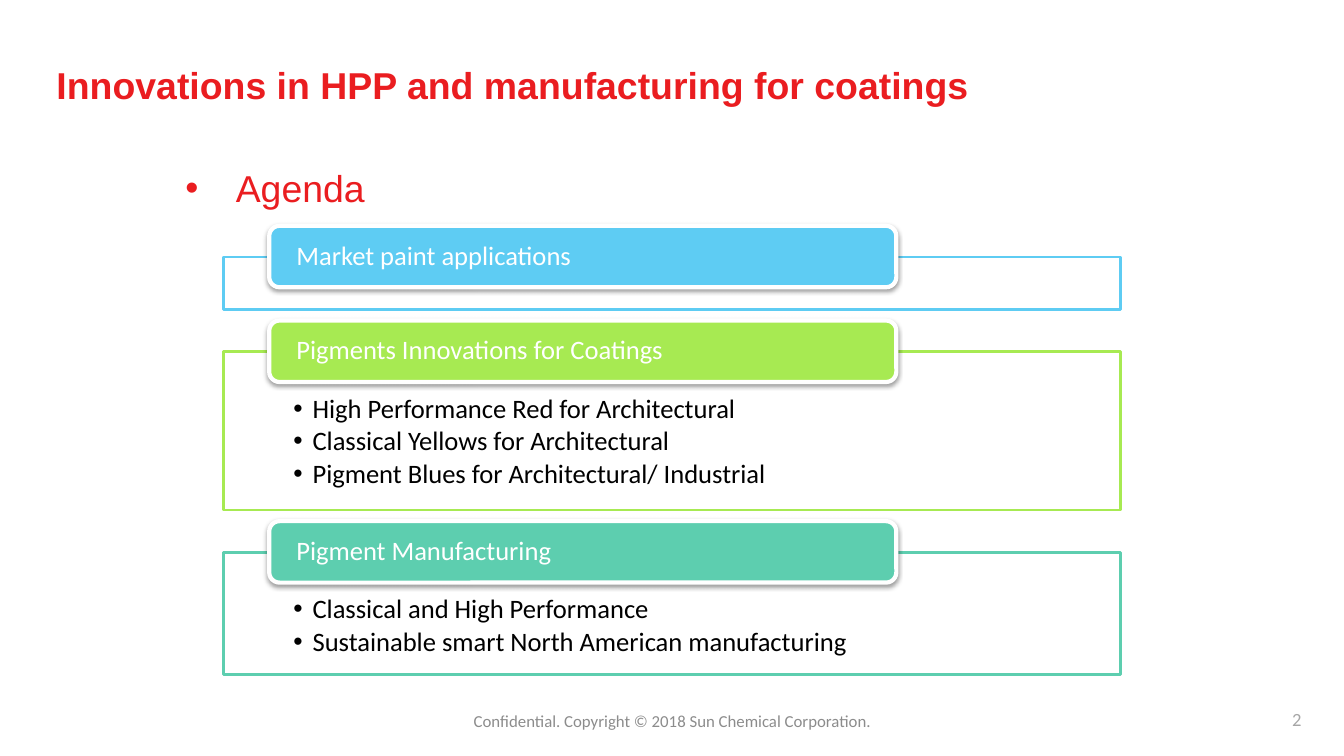
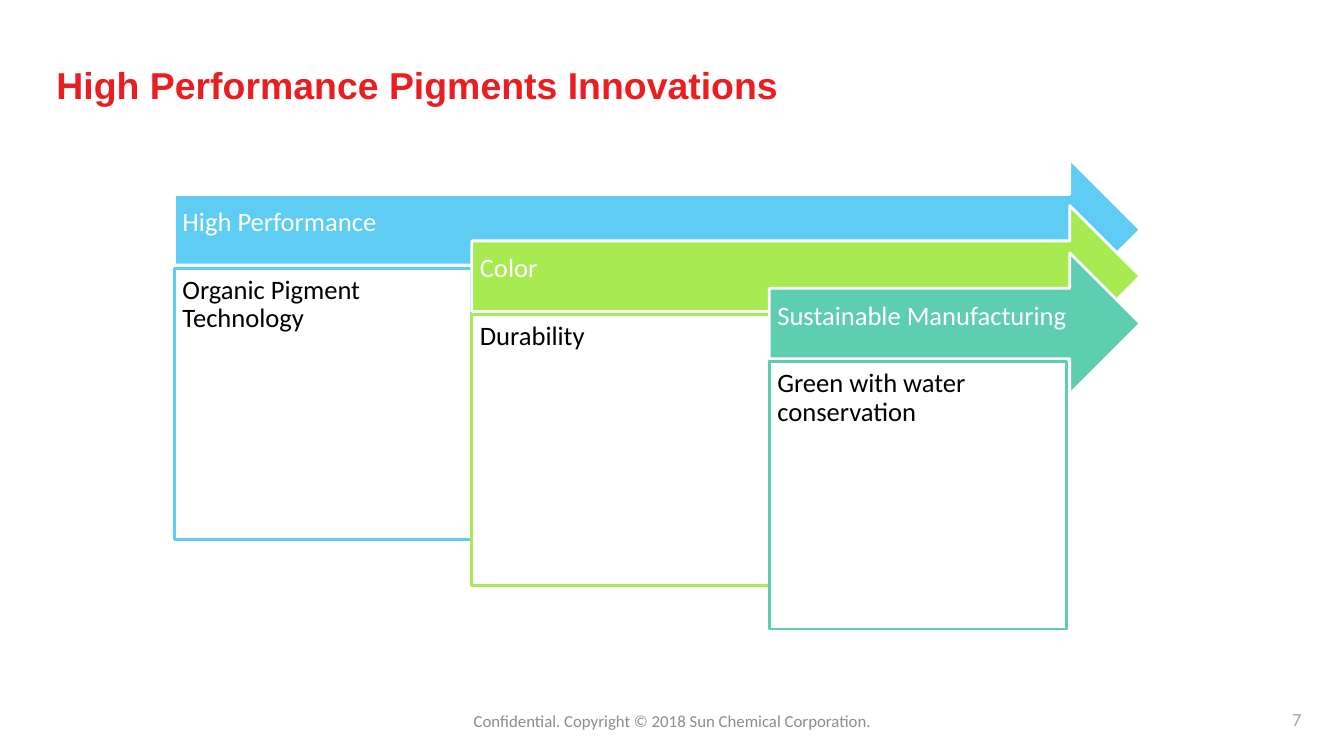
from dataclasses import dataclass

from lxml.etree import SubElement
from pptx import Presentation
from pptx.dml.color import RGBColor
from pptx.enum.shapes import MSO_SHAPE as Preset
from pptx.enum.text import MSO_ANCHOR as Anchor, MSO_AUTO_SIZE as AutoSize, PP_ALIGN as Align
from pptx.oxml.ns import qn
from pptx.util import Emu, Pt

SCALE = 9144
RED, WHITE, BLACK = "EA1D20", "FFFFFF", "000000"
BLUE, GREEN, TEAL = "5ECCF3", "A7EA52", "5DCEAF"
FOOTER_GREY, NUMBER_GREY = "8C8C8C", "A6A6A6"
FOOTER = "Confidential. Copyright © 2018 Sun Chemical Corporation."


@dataclass(frozen=True)
class Box:
    left: int
    top: int
    width: int
    height: int

    def emu(self) -> tuple:
        return px(self.left), px(self.top), px(self.width), px(self.height)


@dataclass(frozen=True)
class TextStyle:
    size: float
    color: str
    font: str = "Calibri"
    bold: bool = False
    align: Align = Align.LEFT
    anchor: Anchor = Anchor.MIDDLE
    insets: tuple = (10, 5, 10, 5)
    line_spacing: float = 1.0
    space_after: float = 0
    bullet_indent: int = 0


@dataclass(frozen=True)
class AgendaItem:
    heading: str
    color: str
    panel_height: int
    points: tuple = ()


@dataclass(frozen=True)
class Stage:
    heading: str
    detail: str
    color: str
    box_height: int = 269


TITLE = TextStyle(26.7, RED, "Arial", bold=True)
AGENDA = TextStyle(26.7, RED, "Arial", bullet_indent=50)
FOOTER_STYLE = TextStyle(12, FOOTER_GREY, align=Align.CENTER)
NUMBER = TextStyle(13.3, NUMBER_GREY, align=Align.RIGHT, insets=(13, 7, 13, 7))
LABEL = TextStyle(19, WHITE, insets=(24, 0, 24, 0), line_spacing=0.9)
POINTS = TextStyle(19, BLACK, anchor=Anchor.TOP, insets=(69, 43, 69, 15),
                   line_spacing=0.9, space_after=2.8, bullet_indent=19)
ARROW = TextStyle(19, WHITE, insets=(8, 8, 28, 22), line_spacing=0.9)
DETAIL = TextStyle(19, BLACK, anchor=Anchor.TOP, insets=(8, 8, 8, 8), line_spacing=0.9)

AGENDA_ITEMS = (
    AgendaItem("Market paint applications", BLUE, 52),
    AgendaItem("Pigments Innovations for Coatings", GREEN, 157, (
        "High Performance Red for Architectural",
        "Classical Yellows for Architectural",
        "Pigment Blues for Architectural/ Industrial")),
    AgendaItem("Pigment Manufacturing", TEAL, 121, (
        "Classical and High Performance",
        "Sustainable smart North American manufacturing")),
)
STAGES = (
    Stage("High Performance", "Organic Pigment Technology", BLUE),
    Stage("Color", "Durability", GREEN),
    Stage("Sustainable Manufacturing", "Green with water conservation", TEAL, 265),
)


def px(length: int) -> Emu:
    return Emu(length * SCALE)


def rgb(value: str) -> RGBColor:
    return RGBColor.from_string(value)


def add_bullet(paragraph, indent: int) -> None:
    properties = paragraph._p.get_or_add_pPr()
    properties.set("marL", str(px(indent)))
    properties.set("indent", str(-px(indent)))
    SubElement(properties, qn("a:buFont"), typeface="Arial")
    SubElement(properties, qn("a:buChar"), char="•")


def write_text(shape, lines: tuple, style: TextStyle) -> None:
    frame = shape.text_frame
    frame.word_wrap = True
    frame.auto_size = AutoSize.NONE
    frame.vertical_anchor = style.anchor
    (frame.margin_left, frame.margin_top,
     frame.margin_right, frame.margin_bottom) = map(px, style.insets)
    for index, line in enumerate(lines):
        paragraph = frame.add_paragraph() if index else frame.paragraphs[0]
        if style.bullet_indent:
            add_bullet(paragraph, style.bullet_indent)
        paragraph.alignment = style.align
        paragraph.line_spacing = style.line_spacing
        paragraph.space_before = Pt(0)
        paragraph.space_after = Pt(style.space_after)
        run = paragraph.add_run()
        run.text = line
        run.font.name = style.font
        run.font.size = Pt(style.size)
        run.font.bold = style.bold
        run.font.color.rgb = rgb(style.color)


def add_text(slide, box: Box, text: str, style: TextStyle) -> None:
    write_text(slide.shapes.add_textbox(*box.emu()), (text,), style)


def add_block(slide, preset: Preset, box: Box, fill: str, line: str,
              line_width: int, lines: tuple, style: TextStyle):
    shape = slide.shapes.add_shape(preset, *box.emu())
    shape.shadow.inherit = False
    shape.fill.solid()
    shape.fill.fore_color.rgb = rgb(fill)
    shape.line.color.rgb = rgb(line)
    shape.line.width = Pt(line_width)
    write_text(shape, lines, style)
    return shape


def add_shadow(shape) -> None:
    effects = shape._element.spPr.find(qn("a:effectLst"))
    shadow = SubElement(effects, qn("a:outerShdw"), blurRad="40000", dist="20000",
                        dir="5400000", rotWithShape="0")
    color = SubElement(shadow, qn("a:srgbClr"), val=BLACK)
    SubElement(color, qn("a:alpha"), val="38000")


def add_titled_slide(presentation, title: str, number: int):
    slide = presentation.slides.add_slide(presentation.slide_layouts[5])
    heading = slide.shapes.title
    heading.left, heading.top, heading.width, heading.height = Box(46, 56, 1085, 55).emu()
    write_text(heading, (title,), TITLE)
    add_text(slide, Box(442, 695, 450, 40), FOOTER, FOOTER_STYLE)
    add_text(slide, Box(993, 693, 311, 40), str(number), NUMBER)
    return slide


def build_agenda(presentation) -> None:
    slide = add_titled_slide(presentation, "Innovations in HPP and manufacturing for coatings", 2)
    add_text(slide, Box(174, 150, 861, 72), "Agenda", AGENDA)
    top, gap, overlap = 255, 42, 31
    for item in AGENDA_ITEMS:
        add_block(slide, Preset.RECTANGLE, Box(222, top, 889, item.panel_height),
                  WHITE, item.color, 2, item.points, POINTS)
        label = add_block(slide, Preset.ROUNDED_RECTANGLE, Box(267, top - overlap, 622, 61),
                          item.color, WHITE, 3, (item.heading,), LABEL)
        add_shadow(label)
        top += item.panel_height + gap


def build_stages(presentation) -> None:
    slide = add_titled_slide(presentation, "High Performance Pigments Innovations", 7)
    box_width, arrow_end = 295, 1131
    for index, stage in enumerate(STAGES):
        left = 173 + index * box_width
        top = 158 + index * 93 // 2
        add_block(slide, Preset.RIGHT_ARROW, Box(left, top, arrow_end - left, 140),
                  stage.color, WHITE, 2, (stage.heading,), ARROW)
        add_block(slide, Preset.RECTANGLE, Box(left, top + 108, box_width, stage.box_height),
                  WHITE, stage.color, 2, (stage.detail,), DETAIL)


def main() -> None:
    presentation = Presentation()
    presentation.slide_width = px(1333)
    presentation.slide_height = px(750)
    build_agenda(presentation)
    build_stages(presentation)
    presentation.save("out.pptx")


if __name__ == "__main__":
    main()
